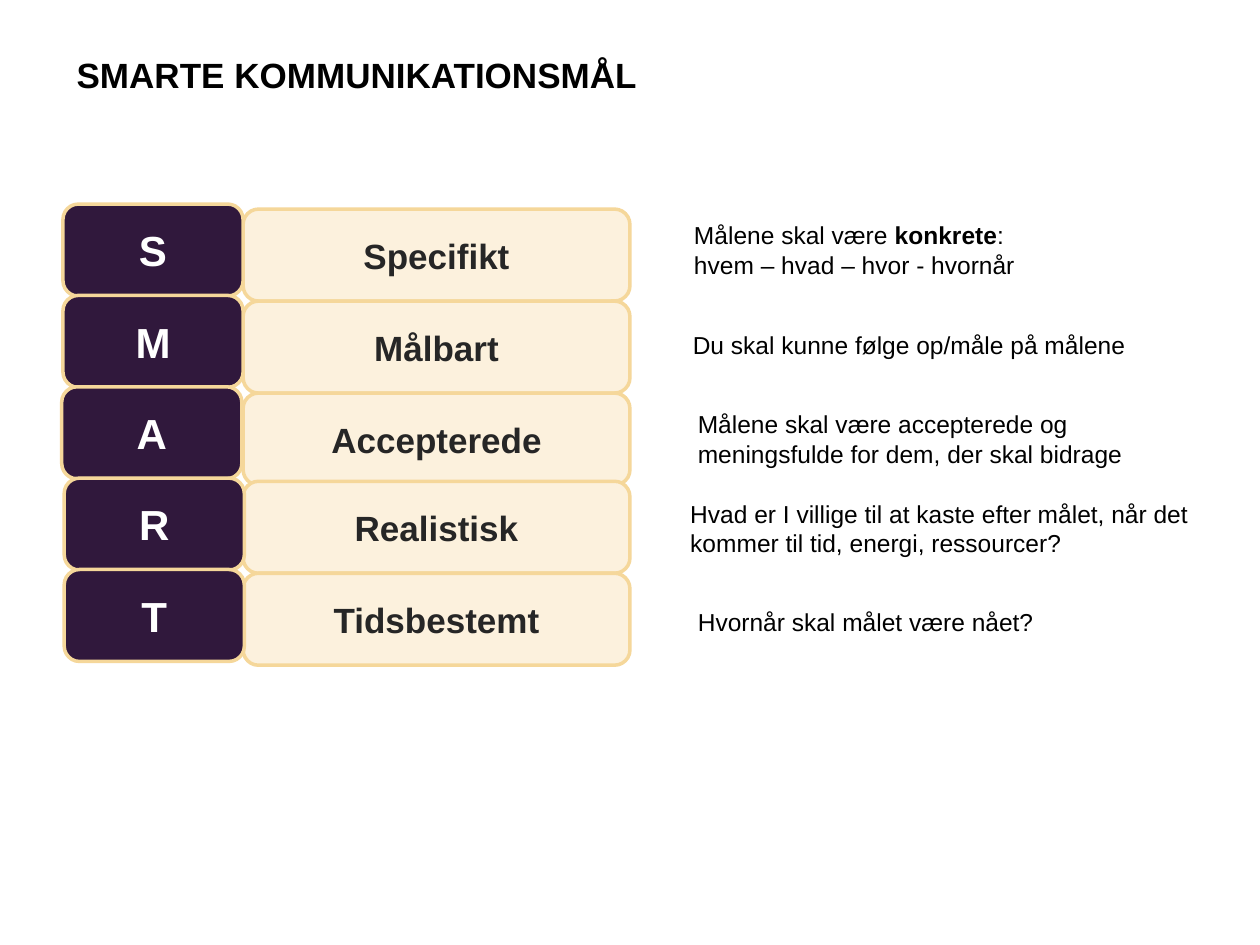
from pptx import Presentation
from pptx.dml.color import RGBColor as Rgb
from pptx.enum.shapes import MSO_SHAPE as Shape
from pptx.enum.text import MSO_ANCHOR as Anchor, PP_ALIGN as Align
from pptx.util import Inches, Pt

TITLE = "SMARTE KOMMUNIKATIONSMÅL"
GOALS = [
    ("S", "Specifikt", ["Målene skal være konkrete:", "hvem – hvad – hvor - hvornår"]),
    ("M", "Målbart", ["Du skal kunne følge op/måle på målene"]),
    ("A", "Accepterede", ["Målene skal være accepterede og meningsfulde for dem, der skal bidrage"]),
    ("R", "Realistisk", ["Hvad er I villige til at kaste efter målet, når det kommer til tid, energi, ressourcer?"]),
    ("T", "Tidsbestemt", ["Hvornår skal målet være nået?"]),
]
EMPHASIS = "konkrete"

THEME = {
    "font": "Arial",
    "text": "000000", "word": "262626", "letter": "FFFFFF",
    "dark": "30183C", "light": "FCF1DD", "border": "F5D79A",
    "title_size": 20, "word_size": 20, "letter_size": 24, "body_size": 14,
    "border_width": 2,
}

ROW_HEIGHT = 0.73
LETTER_TOP, LETTER_PITCH, LETTER_WIDTH = 1.62, 0.725, 1.43
LETTER_LEFTS = [0.5, 0.5, 0.49, 0.51, 0.51]
WORD_LEFT, WORD_TOP, WORD_WIDTH = 1.93, 1.66, 3.07
LOWER_ROWS, LOWER_OVERLAP = 3, 0.03
EXPLANATION_WIDTH = 4.23
EXPLANATION_SPOTS = [(5.41, 1.7, 0.57), (5.4, 2.57, 0.34), (5.44, 3.2, 0.57),
                     (5.38, 3.91, 0.57), (5.44, 4.77, 0.34)]


def style(font, size, color, bold=False):
    font.name = THEME["font"]
    font.size = Pt(size)
    font.bold = bold
    font.color.rgb = Rgb.from_string(THEME[color])


def add_text(slide, box, lines, size, bold=False, anchor=Anchor.TOP):
    frame = slide.shapes.add_textbox(*map(Inches, box)).text_frame
    frame.word_wrap = True
    frame.vertical_anchor = anchor
    for index, line in enumerate(lines):
        paragraph = frame.add_paragraph() if index else frame.paragraphs[0]
        before, found, after = line.partition(EMPHASIS)
        for part in filter(None, (before, found, after)):
            run = paragraph.add_run()
            run.text = part
            style(run.font, size, "text", bold or part == EMPHASIS)


def add_tile(slide, box, label, fill, color, size):
    tile = slide.shapes.add_shape(Shape.ROUNDED_RECTANGLE, *map(Inches, box))
    tile.shadow.inherit = False
    tile.fill.solid()
    tile.fill.fore_color.rgb = Rgb.from_string(THEME[fill])
    tile.line.color.rgb = Rgb.from_string(THEME["border"])
    tile.line.width = Pt(THEME["border_width"])
    frame = tile.text_frame
    frame.text = label
    frame.vertical_anchor = Anchor.MIDDLE
    paragraph = frame.paragraphs[0]
    paragraph.alignment = Align.CENTER
    style(paragraph.runs[0].font, size, color, bold=True)


def main():
    deck = Presentation()
    deck.slide_width, deck.slide_height = Inches(10), Inches(7.5)
    slide = deck.slides.add_slide(deck.slide_layouts[6])

    add_text(slide, (0.51, 0, 7.56, 1.18), [TITLE], THEME["title_size"], True, Anchor.MIDDLE)

    for (_, _, explanation), (left, top, height) in zip(GOALS, EXPLANATION_SPOTS):
        add_text(slide, (left, top, EXPLANATION_WIDTH, height), explanation, THEME["body_size"])

    for row, (_, word, _) in enumerate(GOALS):
        overlap = LOWER_OVERLAP if row >= LOWER_ROWS else 0
        top = WORD_TOP + row * ROW_HEIGHT - overlap
        add_tile(slide, (WORD_LEFT, top, WORD_WIDTH, ROW_HEIGHT), word,
                 "light", "word", THEME["word_size"])

    for row, ((letter, _, _), left) in enumerate(zip(GOALS, LETTER_LEFTS)):
        top = LETTER_TOP + row * LETTER_PITCH
        add_tile(slide, (left, top, LETTER_WIDTH, ROW_HEIGHT), letter,
                 "dark", "letter", THEME["letter_size"])

    deck.save("out.pptx")


if __name__ == "__main__":
    main()
